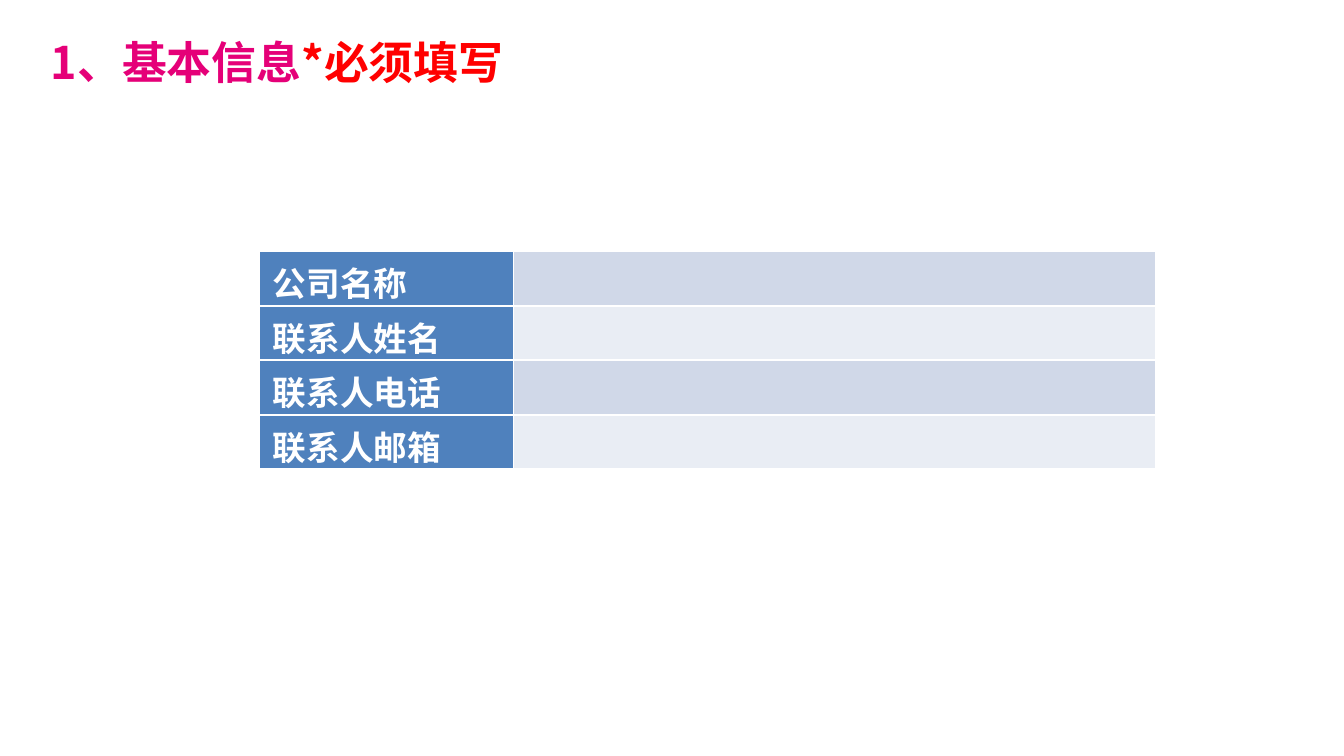
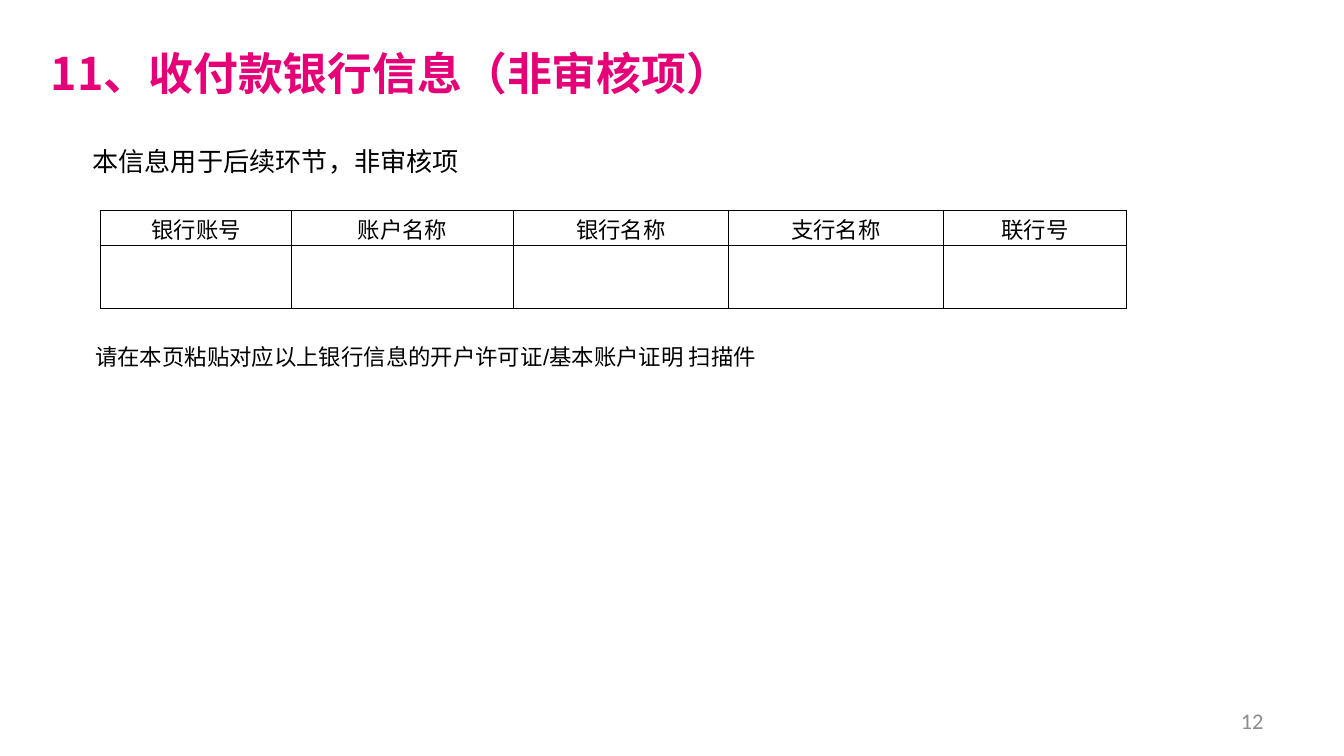
from dataclasses import dataclass

from lxml import etree
from pptx import Presentation
from pptx.dml.color import RGBColor
from pptx.enum.text import MSO_ANCHOR, PP_ALIGN
from pptx.oxml.ns import qn
from pptx.util import Pt

TOP, MIDDLE = MSO_ANCHOR.TOP, MSO_ANCHOR.MIDDLE
LEFT, CENTER, RIGHT = PP_ALIGN.LEFT, PP_ALIGN.CENTER, PP_ALIGN.RIGHT


@dataclass(frozen=True)
class Theme:
    cjk: str = "Noto Sans CJK SC"
    latin: str = "Arial"
    number_font: str = "Calibri"
    title: str = "E50078"
    required: str = "FF0000"
    text: str = "000000"
    muted: str = "8C8C8C"
    white: str = "FFFFFF"
    label_fill: str = "4F81BD"
    bands: tuple = ("D0D8E8", "E9EDF4")
    title_size: float = 24
    label_size: float = 18
    body_size: float = 14
    small_size: float = 12


class Deck:
    def __init__(self, theme):
        self.theme = theme
        self.prs = Presentation()
        self.prs.slide_width, self.prs.slide_height = Pt(720), Pt(405)
        self.s = None

    def new_slide(self):
        self.s = self.prs.slides.add_slide(self.prs.slide_layouts[6])

    def style(self, r, size, color, font=None, bold=False):
        r.font.size, r.font.bold = Pt(size), bold
        r.font.name = font or self.theme.cjk
        r.font.color.rgb = RGBColor.from_string(color)
        ea = etree.Element(qn("a:ea"), typeface=self.theme.cjk)
        r.font._element.find(qn("a:latin")).addnext(ea)

    def text(self, box, parts, size, font=None, bold=False, align=LEFT, anchor=TOP):
        """Add one paragraph made of (text, colour) parts."""
        tf = self.s.shapes.add_textbox(*map(Pt, box)).text_frame
        tf.word_wrap, tf.vertical_anchor = True, anchor
        p = tf.paragraphs[0]
        p.alignment = align
        for words, color in parts:
            r = p.add_run()
            r.text = words
            self.style(r, size, color, font, bold)
        return p

    def title(self, top, width, *parts):
        size = self.theme.title_size
        p = self.text((20.2, top, width, 44.6), parts, size, bold=True)
        p.space_before = Pt(size * 0.2)

    def page_number(self, number):
        t = self.theme
        self.text((516.2, 375.1, 167.8, 21.6), [(number, t.muted)], t.small_size,
                  t.number_font, align=RIGHT, anchor=MIDDLE)

    def table(self, left, top, widths, heights):
        frame = self.s.shapes.add_table(len(heights), len(widths), Pt(left), Pt(top),
                                        Pt(sum(widths)), Pt(sum(heights)))
        table = frame.table
        table.first_row = table.horz_banding = False
        for col, width in zip(table.columns, widths):
            col.width = Pt(width)
        for row, height in zip(table.rows, heights):
            row.height = Pt(height)
        return table

    def cell(self, cell, border, border_width, fill=None):
        if fill:
            cell.fill.solid()
            cell.fill.fore_color.rgb = RGBColor.from_string(fill)
        else:
            cell.fill.background()
        # Borders come before the fill in the cell properties
        tcPr = cell._tc.get_or_add_tcPr()
        for i, side in enumerate(("lnL", "lnR", "lnT", "lnB")):
            ln = etree.Element(qn("a:" + side), w=str(Pt(border_width)))
            solid = etree.SubElement(ln, qn("a:solidFill"))
            etree.SubElement(solid, qn("a:srgbClr"), val=border)
            tcPr.insert(i, ln)

    def cell_text(self, cell, words, size, color, bold=False, align=LEFT):
        p = cell.text_frame.paragraphs[0]
        p.text = words
        p.alignment = align
        self.style(p.runs[0], size, color, bold=bold)


def basic_info(deck):
    t = deck.theme
    deck.new_slide()
    deck.title(15.1, 283.7, ("1、基本信息", t.title), ("*必须填写", t.required))

    # Contact form: label column and banded answer column
    labels = ["公司名称", "联系人姓名", "联系人电话", "联系人邮箱"]
    table = deck.table(139, 134.6, [136.1, 344.2], [29.2] * len(labels))
    for i, label in enumerate(labels):
        name, answer = table.cell(i, 0), table.cell(i, 1)
        deck.cell(name, t.white, 1, t.label_fill)
        deck.cell_text(name, label, t.label_size, t.white, bold=True)
        deck.cell(answer, t.white, 1, t.bands[i % 2])


def bank_info(deck):
    t = deck.theme
    deck.new_slide()
    deck.title(20.9, 589.7, ("11、收付款银行信息（非审核项）", t.title))
    deck.page_number("12")
    p = deck.text((42.5, 66.2, 221, 29.5), [("本信息用于后续环节，非审核项", t.text)],
                  t.body_size)
    p.line_spacing = 1.5

    # Bank account table: headings over one empty row
    headings = ["银行账号", "账户名称", "银行名称", "支行名称", "联行号"]
    table = deck.table(54, 113, [102.2, 118.8, 115.2, 115.2, 98], [18.7, 33.7])
    for j, heading in enumerate(headings):
        head = table.cell(0, j)
        head.vertical_anchor = MIDDLE
        head.margin_left = head.margin_right = Pt(0.7)
        head.margin_top = head.margin_bottom = Pt(0.7)
        deck.cell_text(head, heading, t.small_size, t.text, align=CENTER)
        for i in range(2):
            deck.cell(table.cell(i, j), t.text, 0.5)

    # Instruction below the table
    note = "请在本页粘贴对应以上银行信息的开户许可证/基本账户证明 扫描件"
    deck.text((43.9, 180, 373, 21.6), [(note, t.text)], t.small_size, t.latin,
              anchor=MIDDLE)


def main():
    deck = Deck(Theme())
    basic_info(deck)
    bank_info(deck)
    deck.prs.save("out.pptx")


if __name__ == "__main__":
    main()
